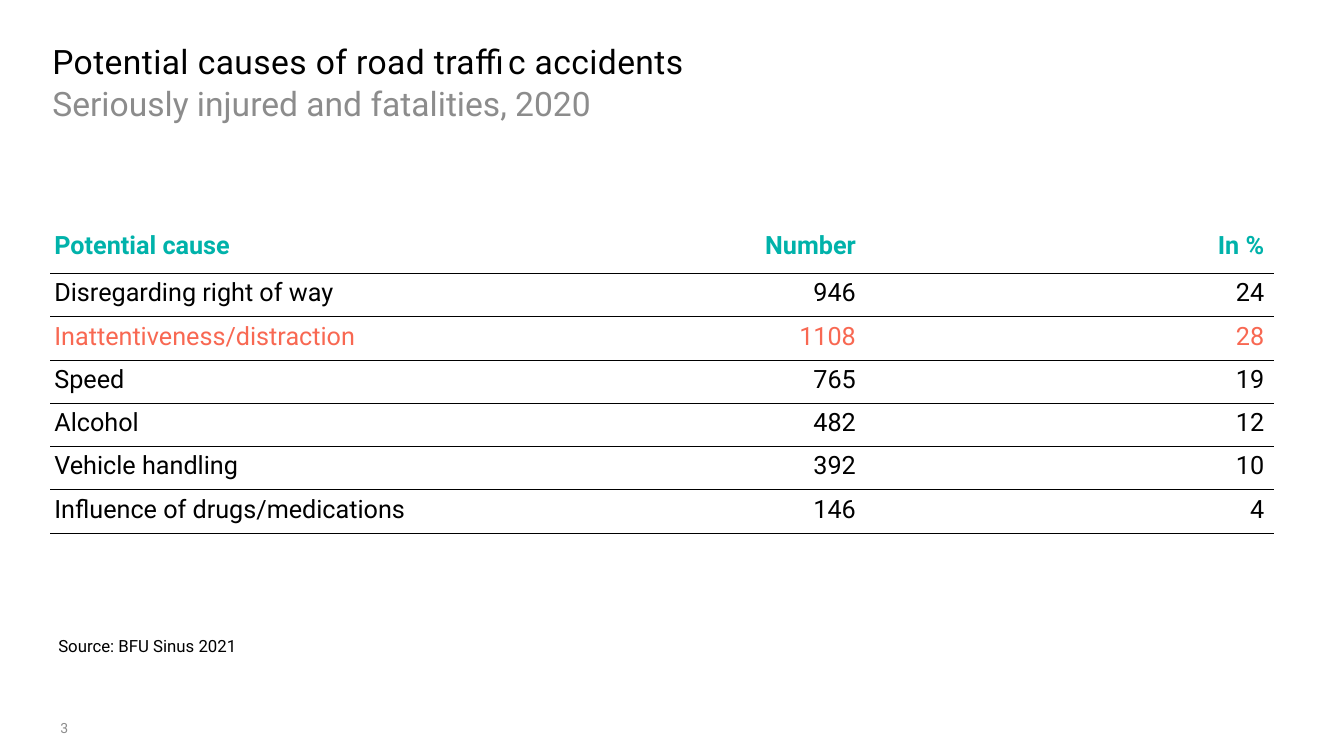
from dataclasses import dataclass

from lxml import etree
from pptx import Presentation
from pptx.dml.color import RGBColor
from pptx.enum.text import PP_ALIGN
from pptx.oxml.ns import qn
from pptx.slide import Slide
from pptx.table import _Cell
from pptx.text.text import _Paragraph
from pptx.util import Cm, Pt

LEFT, RIGHT = PP_ALIGN.LEFT, PP_ALIGN.RIGHT
BLACK = RGBColor(0x00, 0x00, 0x00)
GREY = RGBColor(0x8C, 0x8C, 0x8C)
TEAL = RGBColor(0x00, 0xB2, 0xAA)
CORAL = RGBColor(0xF8, 0x68, 0x52)
FONT = "Roboto"
RULE_WIDTH = Pt(0.5)

COLUMN_WIDTHS = (Cm(16.33), Cm(4.22), Cm(10.29))
HEADER_HEIGHT, ROW_HEIGHT = Cm(1.2), Cm(1.09)


@dataclass(frozen=True)
class Label:
    text: str
    left: float
    top: float
    width: float
    height: float
    size: float
    color: RGBColor
    inset_x: float = 0
    inset_y: float = 0
    line_spacing: float = 1.0
    tracking: int = 0  # hundredths of a point


@dataclass(frozen=True)
class CauseRow:
    cells: tuple[str, str, str]
    color: RGBColor = BLACK
    bold: bool = False
    ruled: bool = True


LABELS = (
    Label("Potential causes of road traffic accidents",
          1.32, 1.02, 31.19, 0.89, 24, BLACK, tracking=30),
    Label("Seriously injured and fatalities, 2020",
          1.32, 2.03, 31.19, 0.99, 24, GREY, line_spacing=1.05),
    Label("Source: BFU Sinus 2021",
          1.22, 15.88, 31.57, 0.76, 12, BLACK, inset_x=0.25, inset_y=0.13),
    Label("3", 1.52, 18.14, 2.26, 0.46, 10, GREY),
)

CAUSES = (
    CauseRow(("Potential cause", "Number", "In %"), TEAL, bold=True),
    CauseRow(("Disregarding right of way", "946", "24")),
    CauseRow(("Inattentiveness/distraction", "1108", "28"), CORAL),
    CauseRow(("Speed", "765", "19")),
    CauseRow(("Alcohol", "482", "12")),
    CauseRow(("Vehicle handling", "392", "10")),
    CauseRow(("Influence of drugs/medications", "146", "4")),
    CauseRow(("", "", ""), ruled=False),
)


def set_font(paragraph: _Paragraph, size: float, color: RGBColor, bold: bool = False) -> None:
    font = paragraph.font
    font.name, font.size, font.bold = FONT, Pt(size), bold
    font.color.rgb = color


def add_label(slide: Slide, label: Label) -> None:
    box = slide.shapes.add_textbox(Cm(label.left), Cm(label.top), Cm(label.width), Cm(label.height))
    frame = box.text_frame
    frame.word_wrap = True
    frame.margin_left = frame.margin_right = Cm(label.inset_x)
    frame.margin_top = frame.margin_bottom = Cm(label.inset_y)
    paragraph = frame.paragraphs[0]
    run = paragraph.add_run()
    run.text = label.text
    paragraph.line_spacing = label.line_spacing
    set_font(paragraph, label.size, label.color)
    if label.tracking:
        run._r.get_or_add_rPr().set("spc", str(label.tracking))


def set_borders(cell: _Cell, ruled_edges: set[str]) -> None:
    """Rule the named edges (L, R, T, B) in black and clear the others."""
    properties = cell._tc.get_or_add_tcPr()
    for edge in "LRTB":
        line = etree.SubElement(properties, qn(f"a:ln{edge}"), w=str(int(RULE_WIDTH)))
        if edge in ruled_edges:
            fill = etree.SubElement(line, qn("a:solidFill"))
            etree.SubElement(fill, qn("a:srgbClr"), val=str(BLACK))
        else:
            etree.SubElement(line, qn("a:noFill"))


def add_cause_table(slide: Slide) -> None:
    height = HEADER_HEIGHT + ROW_HEIGHT * (len(CAUSES) - 1)
    table = slide.shapes.add_table(len(CAUSES), len(COLUMN_WIDTHS), Cm(1.27), Cm(5.69),
                                   sum(COLUMN_WIDTHS), height).table
    table.first_row = table.horz_banding = False
    for column, width in zip(table.columns, COLUMN_WIDTHS):
        column.width = width
    for index, cause in enumerate(CAUSES):
        table.rows[index].height = ROW_HEIGHT if index else HEADER_HEIGHT
        edges = ({"T"} if index else set()) | ({"B"} if cause.ruled else set())
        for column_index, text in enumerate(cause.cells):
            cell = table.cell(index, column_index)
            cell.margin_left, cell.margin_right = Cm(0.1), Cm(0.25)
            cell.margin_top = cell.margin_bottom = Cm(0.13)
            set_borders(cell, edges)
            cell.fill.background()
            paragraph = cell.text_frame.paragraphs[0]
            if text:
                paragraph.add_run().text = text
            paragraph.alignment = RIGHT if column_index else LEFT
            set_font(paragraph, 18, cause.color, cause.bold)


def main() -> None:
    presentation = Presentation()
    presentation.slide_width, presentation.slide_height = Cm(33.87), Cm(19.05)
    slide = presentation.slides.add_slide(presentation.slide_layouts[6])
    for label in LABELS:
        add_label(slide, label)
    add_cause_table(slide)
    presentation.save("out.pptx")


if __name__ == "__main__":
    main()
